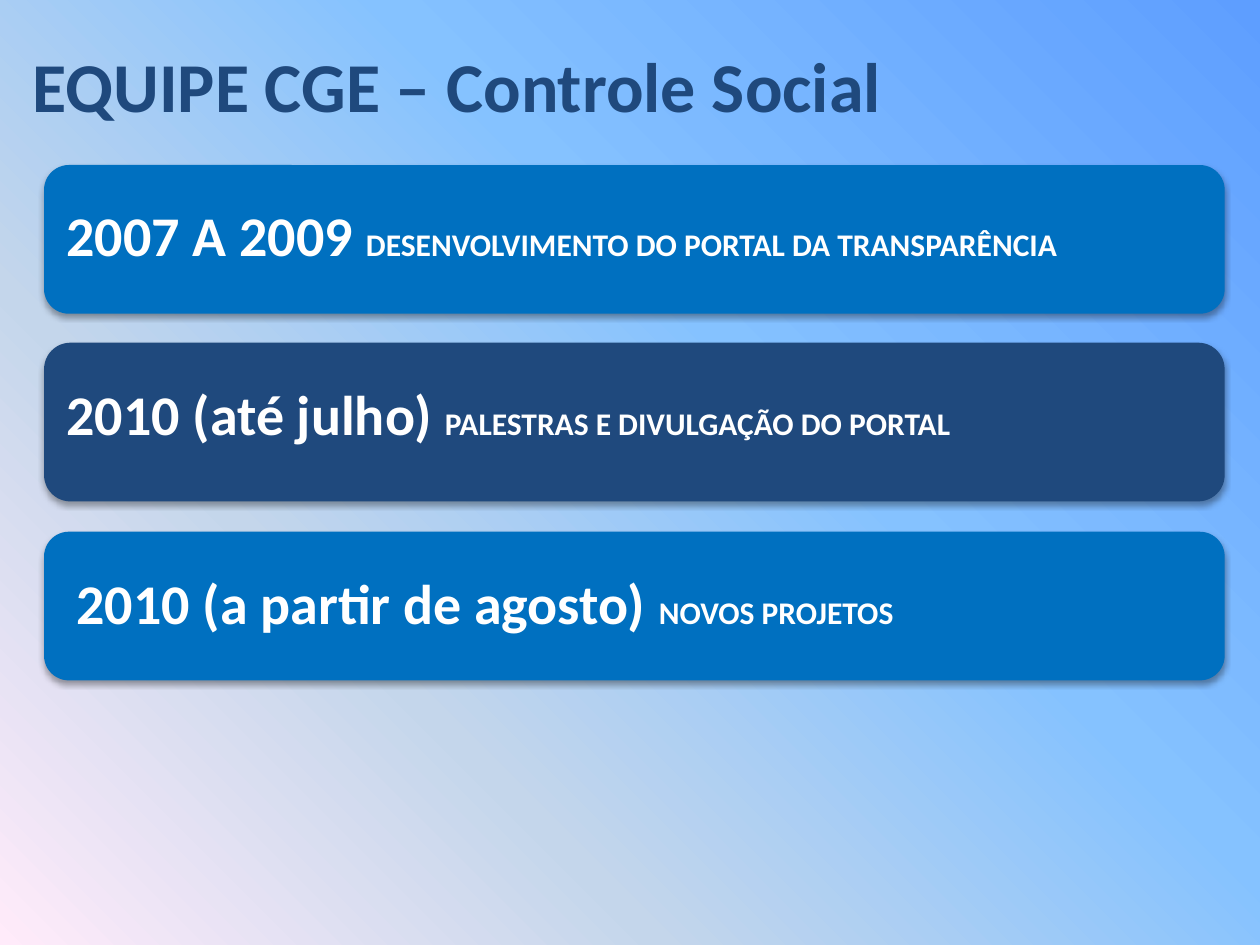
import pptx
import pptx.util
import pptx.dml.color
import pptx.enum.shapes
import pptx.enum.text
import pptx.oxml
import pptx.oxml.ns
from pptx.util import Inches

COLORS = {"navy": "1F497D", "blue": "0070C0", "white": "FFFFFF", "shadow": "000000"}
BACKGROUND_STOPS = [(0, "5E9EFF"), (40, "85C2FF"), (70, "C4D6EB"), (100, "FFEBFA")]
NS = pptx.oxml.ns.nsdecls("a")


def add_run(paragraph, text, size, color):
    run = paragraph.add_run()
    run.text = text
    run.font.name = "Calibri"
    run.font.size = pptx.util.Pt(size)
    run.font.bold = True
    run.font.color.rgb = pptx.dml.color.RGBColor.from_string(COLORS[color])


def fit_frame(frame):
    """Wrap the text from the top left and let the shape grow with it."""
    frame.word_wrap = True
    frame.auto_size = pptx.enum.text.MSO_AUTO_SIZE.SHAPE_TO_FIT_TEXT
    frame.vertical_anchor = pptx.enum.text.MSO_ANCHOR.TOP
    frame.paragraphs[0].alignment = pptx.enum.text.PP_ALIGN.LEFT
    return frame.paragraphs[0]


prs = pptx.Presentation()
prs.slide_width, prs.slide_height = Inches(10), Inches(7.5)
slide = prs.slides.add_slide(prs.slide_layouts[5])

# Background gradient, from top right to bottom left
background = slide.background.fill
background.gradient()
background.gradient_angle = 225
stop_list = next(slide.element.iter(pptx.oxml.ns.qn("a:gsLst")))
for stop in list(stop_list):
    stop_list.remove(stop)
for percent, color in BACKGROUND_STOPS:
    stop_list.append(pptx.oxml.parse_xml(
        f'<a:gs {NS} pos="{percent * 1000}"><a:srgbClr val="{color}"/></a:gs>'))

title = slide.shapes.title
title.left, title.top = Inches(0.16), Inches(0.29)
title.width, title.height = Inches(9.56), Inches(0.77)
add_run(fit_frame(title.text_frame), "EQUIPE CGE – Controle Social", 40, "navy")

# Period, activity, band colour, band top and height, text left and top
periods = [
    ("2007 A 2009 ", "DESENVOLVIMENTO DO PORTAL DA TRANSPARÊNCIA", "blue", 1.31, 1.18, 0.43, 1.54),
    ("2010 (até julho) ", "PALESTRAS E DIVULGAÇÃO DO PORTAL", "navy", 2.72, 1.26, 0.43, 2.96),
    ("2010 (a partir de agosto) ", "NOVOS PROJETOS", "blue", 4.22, 1.18, 0.51, 4.46),
]
for period, activity, color, band_top, band_height, text_left, text_top in periods:
    band = slide.shapes.add_shape(
        pptx.enum.shapes.MSO_SHAPE.ROUNDED_RECTANGLE,
        Inches(0.35), Inches(band_top), Inches(9.37), Inches(band_height))
    band.fill.solid()
    band.fill.fore_color.rgb = pptx.dml.color.RGBColor.from_string(COLORS[color])
    band.line.fill.background()
    band.shadow.inherit = False
    effects = band.element.spPr.find(pptx.oxml.ns.qn("a:effectLst"))
    effects.append(pptx.oxml.parse_xml(
        f'<a:outerShdw {NS} blurRad="40000" dist="23000" dir="5400000" rotWithShape="0">'
        f'<a:srgbClr val="{COLORS["shadow"]}"><a:alpha val="35000"/></a:srgbClr>'
        '</a:outerShdw>'))

    label = slide.shapes.add_textbox(
        Inches(text_left), Inches(text_top), Inches(8.98), Inches(0.64))
    paragraph = fit_frame(label.text_frame)
    add_run(paragraph, period, 32, "white")
    add_run(paragraph, activity, 18, "white")

prs.save("out.pptx")
